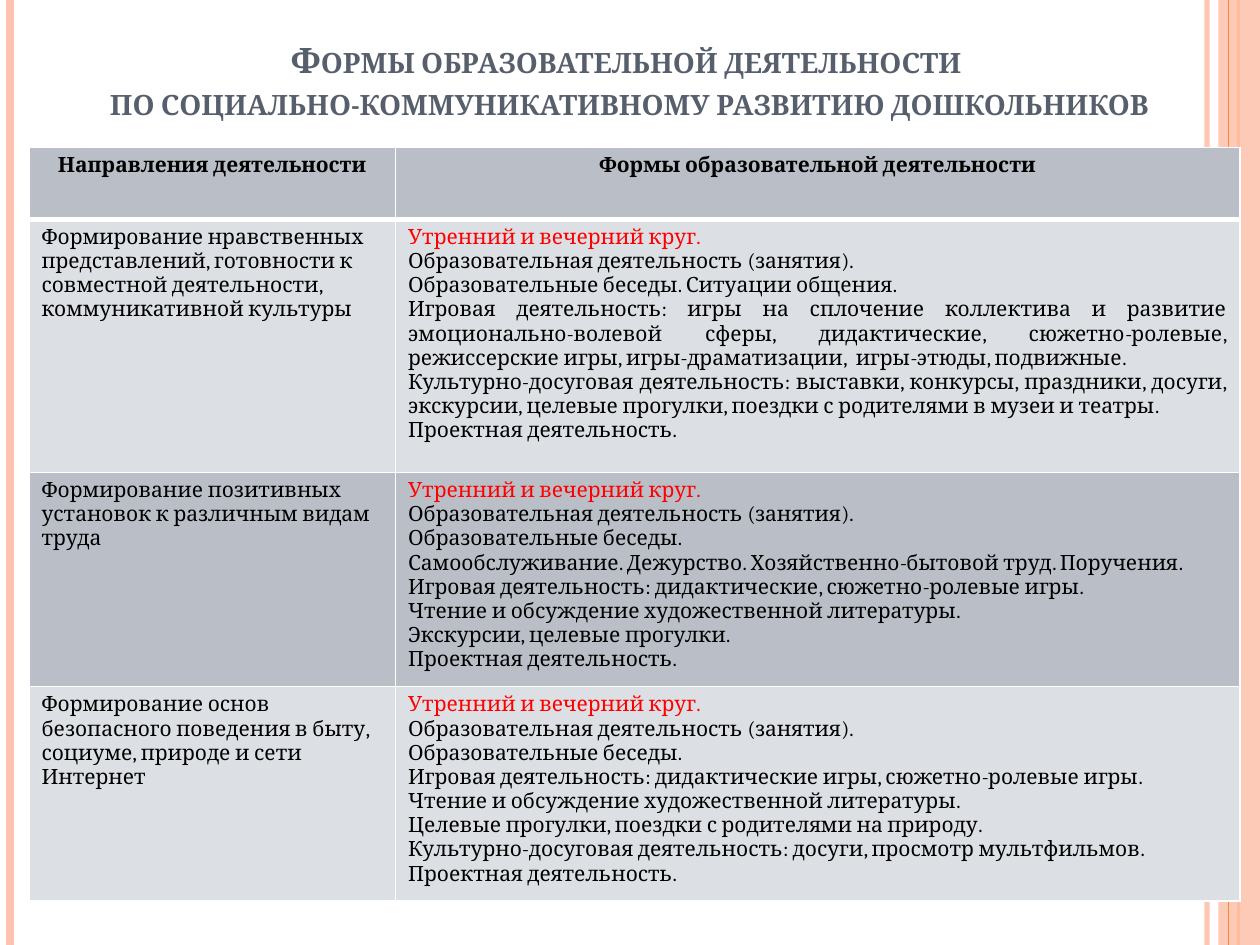
from lxml import etree
from pptx import Presentation
from pptx.dml.color import RGBColor
from pptx.enum.shapes import MSO_CONNECTOR, MSO_SHAPE
from pptx.enum.text import MSO_ANCHOR, PP_ALIGN
from pptx.oxml.ns import qn
from pptx.util import Inches, Pt

STRAIGHT = MSO_CONNECTOR.STRAIGHT
RECTANGLE = MSO_SHAPE.RECTANGLE
BOTTOM = MSO_ANCHOR.BOTTOM
LEFT, CENTER, JUSTIFY = PP_ALIGN.LEFT, PP_ALIGN.CENTER, PP_ALIGN.JUSTIFY

THEME = {
    "font": "Cambria", "title_size": 20, "table_size": 12,
    "title": "575F6D", "text": "000000", "accent": "FF0000",
    "dark_row": "B9BEC7", "light_row": "DCDFE3", "grid": "FFFFFF",
    "peach": "FEC3AE", "orange": "FE8637",
}

TITLE_LINES = ["Формы образовательной деятельности ",
               "по социально-коммуникативному развитию дошкольников"]
HEADERS = ["Направления деятельности", "Формы образовательной деятельности"]
# Every direction opens with these two forms of activity.
DAILY_CIRCLE = "Утренний и вечерний круг."
LESSONS = "Образовательная деятельность (занятия)."
DIRECTIONS = [
    ("Формирование нравственных представлений, готовности к совместной "
     "деятельности, коммуникативной культуры",
     ["Образовательные беседы. Ситуации общения.",
      "Игровая деятельность: игры на сплочение коллектива и развитие "
      "эмоционально-волевой сферы, дидактические, сюжетно-ролевые, "
      "режиссерские игры, игры-драматизации,  игры-этюды, подвижные.",
      "Культурно-досуговая деятельность: выставки, конкурсы, праздники, досуги, "
      "экскурсии, целевые прогулки, поездки с родителями в музеи и театры. ",
      "Проектная деятельность."]),
    ("Формирование позитивных установок к различным видам труда",
     ["Образовательные беседы.",
      "Самообслуживание. Дежурство. Хозяйственно-бытовой труд. Поручения.",
      "Игровая деятельность: дидактические, сюжетно-ролевые игры.",
      "Чтение и обсуждение художественной литературы.",
      "Экскурсии, целевые прогулки. ",
      "Проектная деятельность. "]),
    ("Формирование основ безопасного поведения в быту, социуме, природе "
     "и сети Интернет",
     ["Образовательные беседы.",
      "Игровая деятельность: дидактические игры, сюжетно-ролевые игры.",
      "Чтение и обсуждение художественной литературы.",
      "Целевые прогулки, поездки с родителями на природу. ",
      "Культурно-досуговая деятельность: досуги, просмотр мультфильмов.",
      "Проектная деятельность."]),
]

SLIDE_W, SLIDE_H = 10, 7.5
COLUMN_WIDTHS = [2.91, 6.7]
ROW_HEIGHTS = [0.57, 2.01, 1.64, 1.56]
TABLE_LEFT, TABLE_TOP = 0.23, 1.17
GRID_WIDTH, HEADER_RULE_WIDTH = 1, 3
# x, colour, width in points, opacity in percent
STRIPES_BELOW = [(9.58, "peach", 3, 93), (0.08, "peach", 4.5, 100),
                 (9.83, "orange", 1.5, 100)]
STRIPES_ABOVE = [(9.75, "orange", 0.75, 100)]
BAND_LEFT, BAND_OPACITY = 9.67, 87


def color(name):
    return RGBColor.from_string(THEME[name])


def set_opacity(properties, percent):
    srgb = next(properties.iter(qn("a:srgbClr")))
    etree.SubElement(srgb, qn("a:alpha"), val=str(percent * 1000))


def add_stripe(slide, x, color_name, width, opacity):
    stripe = slide.shapes.add_connector(
        STRAIGHT, Inches(x), 0, Inches(x), Inches(SLIDE_H))
    stripe.line.color.rgb = color(color_name)
    stripe.line.width = Pt(width)
    properties = stripe._element.spPr
    if opacity < 100:
        set_opacity(properties, opacity)
    etree.SubElement(properties, qn("a:effectLst"))


def add_band(slide):
    band = slide.shapes.add_shape(
        RECTANGLE, Inches(BAND_LEFT), 0,
        Inches(SLIDE_W - BAND_LEFT), Inches(SLIDE_H))
    band.shadow.inherit = False
    band.fill.solid()
    band.fill.fore_color.rgb = color("peach")
    band.line.fill.background()
    set_opacity(band._element.spPr, BAND_OPACITY)


def add_run(paragraph, text, size, color_name, bold=False):
    run = paragraph.add_run()
    run.text = text
    run.font.name = THEME["font"]
    run.font.size = Pt(THEME[size])
    run.font.bold = bold
    run.font.color.rgb = color(color_name)
    return run


def add_title(slide):
    frame = slide.shapes.add_textbox(
        Inches(-0.16), 0, Inches(10.31), Inches(1.02)).text_frame
    frame.word_wrap = True
    frame.vertical_anchor = BOTTOM
    paragraph = frame.paragraphs[0]
    paragraph.alignment = CENTER
    for index, line in enumerate(TITLE_LINES):
        if index:
            paragraph.add_line_break()
        run = add_run(paragraph, line, "title_size", "title", bold=True)
        run.font._element.set("cap", "small")


def set_borders(cell, top, bottom):
    properties = cell._tc.get_or_add_tcPr()
    widths = {"L": GRID_WIDTH, "R": GRID_WIDTH, "T": top, "B": bottom}
    for index, (side, width) in enumerate(widths.items()):
        border = etree.Element(qn(f"a:ln{side}"), w=str(Pt(width)))
        fill = etree.SubElement(border, qn("a:solidFill"))
        etree.SubElement(fill, qn("a:srgbClr"), val=THEME["grid"])
        properties.insert(index, border)


def fill_cell(cell, lines, alignment, bold=False):
    """Write (text, colour name) pairs as paragraphs of one cell."""
    frame = cell.text_frame
    for index, (text, color_name) in enumerate(lines):
        paragraph = frame.add_paragraph() if index else frame.paragraphs[0]
        paragraph.alignment = alignment
        add_run(paragraph, text, "table_size", color_name, bold)


def add_directions_table(slide):
    table = slide.shapes.add_table(
        len(ROW_HEIGHTS), len(COLUMN_WIDTHS),
        Inches(TABLE_LEFT), Inches(TABLE_TOP),
        Inches(sum(COLUMN_WIDTHS)), Inches(sum(ROW_HEIGHTS))).table
    for column, width in zip(table.columns, COLUMN_WIDTHS):
        column.width = Inches(width)
    for index, (row, height) in enumerate(zip(table.rows, ROW_HEIGHTS)):
        row.height = Inches(height)
        for cell in row.cells:
            cell.fill.solid()
            cell.fill.fore_color.rgb = color("light_row" if index % 2 else "dark_row")
            set_borders(cell,
                        top=HEADER_RULE_WIDTH if index == 1 else GRID_WIDTH,
                        bottom=HEADER_RULE_WIDTH if index == 0 else GRID_WIDTH)

    for column, header in enumerate(HEADERS):
        fill_cell(table.cell(0, column), [(header, "text")], CENTER, bold=True)
    for row, (direction, forms) in enumerate(DIRECTIONS, start=1):
        fill_cell(table.cell(row, 0), [(direction, "text")], LEFT)
        lines = [(DAILY_CIRCLE, "accent")]
        lines += [(form, "text") for form in [LESSONS, *forms]]
        fill_cell(table.cell(row, 1), lines, JUSTIFY)


def main():
    deck = Presentation()
    deck.slide_width, deck.slide_height = Inches(SLIDE_W), Inches(SLIDE_H)
    slide = deck.slides.add_slide(deck.slide_layouts[6])
    for stripe in STRIPES_BELOW:
        add_stripe(slide, *stripe)
    add_band(slide)
    for stripe in STRIPES_ABOVE:
        add_stripe(slide, *stripe)
    add_title(slide)
    add_directions_table(slide)
    deck.save("out.pptx")


if __name__ == "__main__":
    main()
